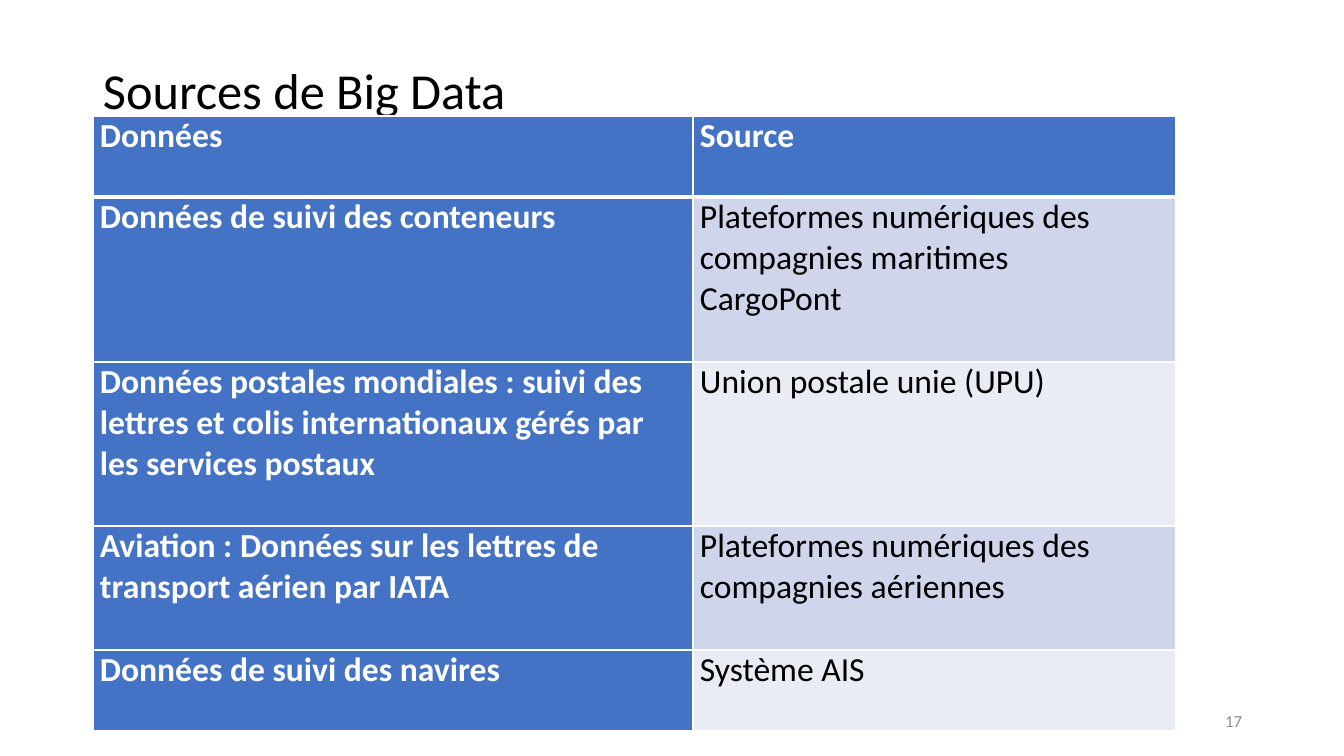
from lxml import etree
from pptx import Presentation
from pptx.dml.color import RGBColor
from pptx.enum.text import MSO_ANCHOR, PP_ALIGN
from pptx.oxml.ns import qn
from pptx.util import Emu, Pt

PX = 914400 / 100.8
FONT = "Calibri"
BLACK = RGBColor(0x00, 0x00, 0x00)
WHITE = RGBColor(0xFF, 0xFF, 0xFF)
GREY = RGBColor(0x8C, 0x8C, 0x8C)
BLUE = RGBColor(0x44, 0x72, 0xC4)
BANDS = [RGBColor(0xCF, 0xD5, 0xEA), RGBColor(0xE9, 0xEB, 0xF5)]
MIDDLE, LEFT, RIGHT = MSO_ANCHOR.MIDDLE, PP_ALIGN.LEFT, PP_ALIGN.RIGHT

COLUMN_WIDTHS = [600, 483]
ROW_HEIGHTS = [81, 165, 164, 124, 81]
ROWS = [
    ("Données", "Source"),
    ("Données de suivi des conteneurs",
     "Plateformes numériques des compagnies maritimes\nCargoPont"),
    ("Données postales mondiales : suivi des lettres et colis internationaux "
     "gérés par les services postaux", "Union postale unie (UPU)"),
    ("Aviation : Données sur les lettres de transport aérien par IATA",
     "Plateformes numériques des compagnies aériennes"),
    ("Données de suivi des navires", "Système AIS"),
]


def px(length):
    return Emu(round(length * PX))


def write(frame, text, size, color, bold=False, align=LEFT, spacing=1.0):
    frame.word_wrap = True
    for index, line in enumerate(text.split("\n")):
        para = frame.add_paragraph() if index else frame.paragraphs[0]
        para.alignment = align
        para.line_spacing = spacing
        span = para.add_run()
        span.text = line
        span.font.name = FONT
        span.font.size = Pt(size)
        span.font.bold = bold
        span.font.color.rgb = color


deck = Presentation()
deck.slide_width, deck.slide_height = px(1344), px(756)
page = deck.slides.add_slide(deck.slide_layouts[6])

title = page.shapes.add_textbox(px(93), px(40), px(1159), px(106))
title.text_frame.vertical_anchor = MIDDLE
write(title.text_frame, "Sources de Big Data", 36, BLACK, spacing=0.9)

table = page.shapes.add_table(
    len(ROWS), len(COLUMN_WIDTHS), px(93), px(116),
    px(sum(COLUMN_WIDTHS)), px(sum(ROW_HEIGHTS))).table
for column, width in zip(table.columns, COLUMN_WIDTHS):
    column.width = px(width)

for r, (texts, height) in enumerate(zip(ROWS, ROW_HEIGHTS)):
    table.rows[r].height = px(height)
    for c, text in enumerate(texts):
        cell = table.cell(r, c)
        heading = r == 0 or c == 0
        cell.margin_left = cell.margin_right = px(7)
        cell.margin_top = cell.margin_bottom = 0
        cell.fill.solid()
        cell.fill.fore_color.rgb = BLUE if heading else BANDS[(r - 1) % 2]
        write(cell.text_frame, text, 24, WHITE if heading else BLACK, bold=heading)

        properties = cell._tc.get_or_add_tcPr()
        for position, side in enumerate(("lnL", "lnR", "lnT", "lnB")):
            under_header = (r, side) in ((0, "lnB"), (1, "lnT"))
            border = etree.Element(qn(f"a:{side}"), w=str(Pt(3 if under_header else 1)))
            fill = etree.SubElement(border, qn("a:solidFill"))
            etree.SubElement(fill, qn("a:srgbClr"), val=str(WHITE))
            properties.insert(position, border)

number = page.shapes.add_textbox(px(950), px(701), px(302), px(40))
number.text_frame.vertical_anchor = MIDDLE
write(number.text_frame, "17", 12, GREY, align=RIGHT)

deck.save("out.pptx")
